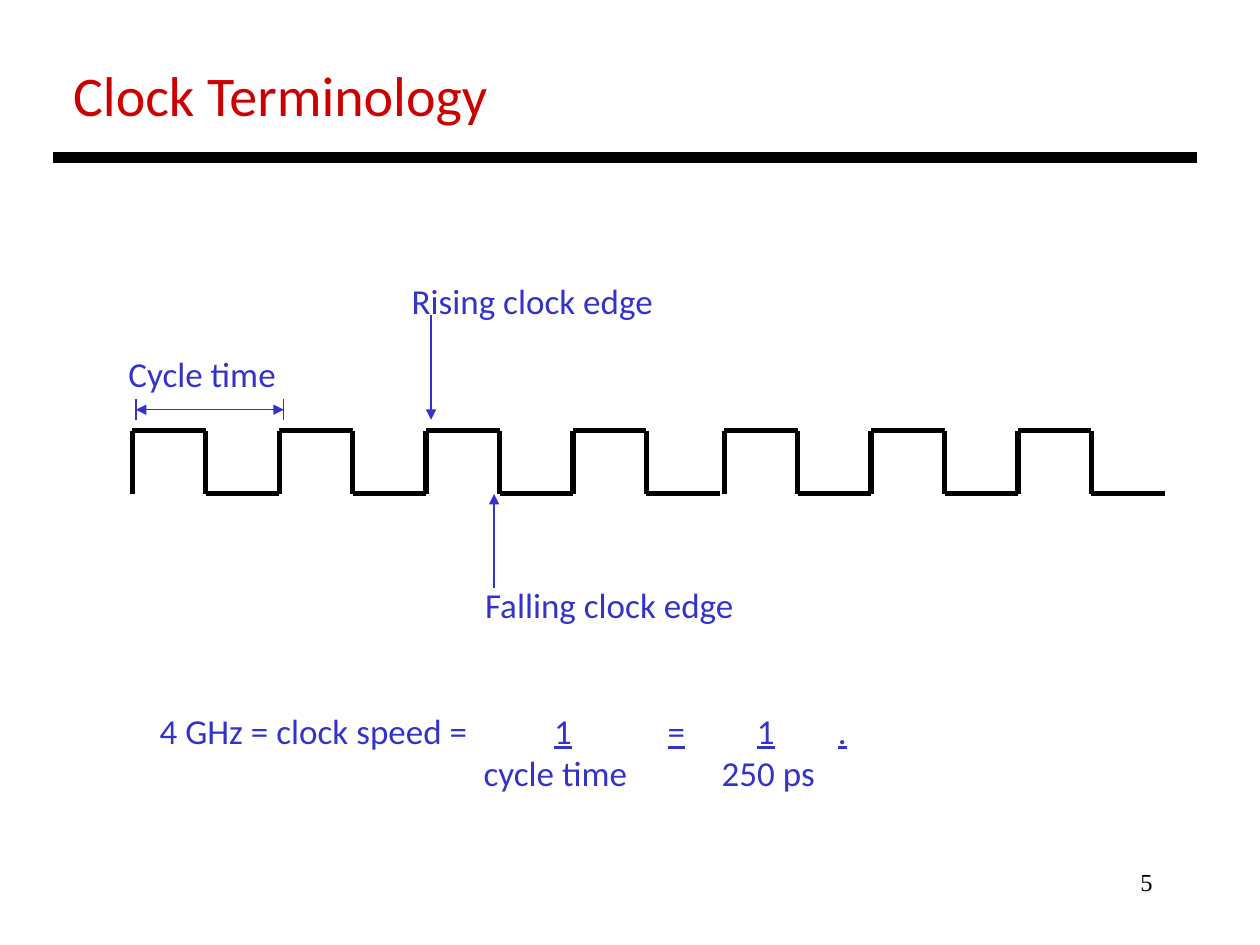
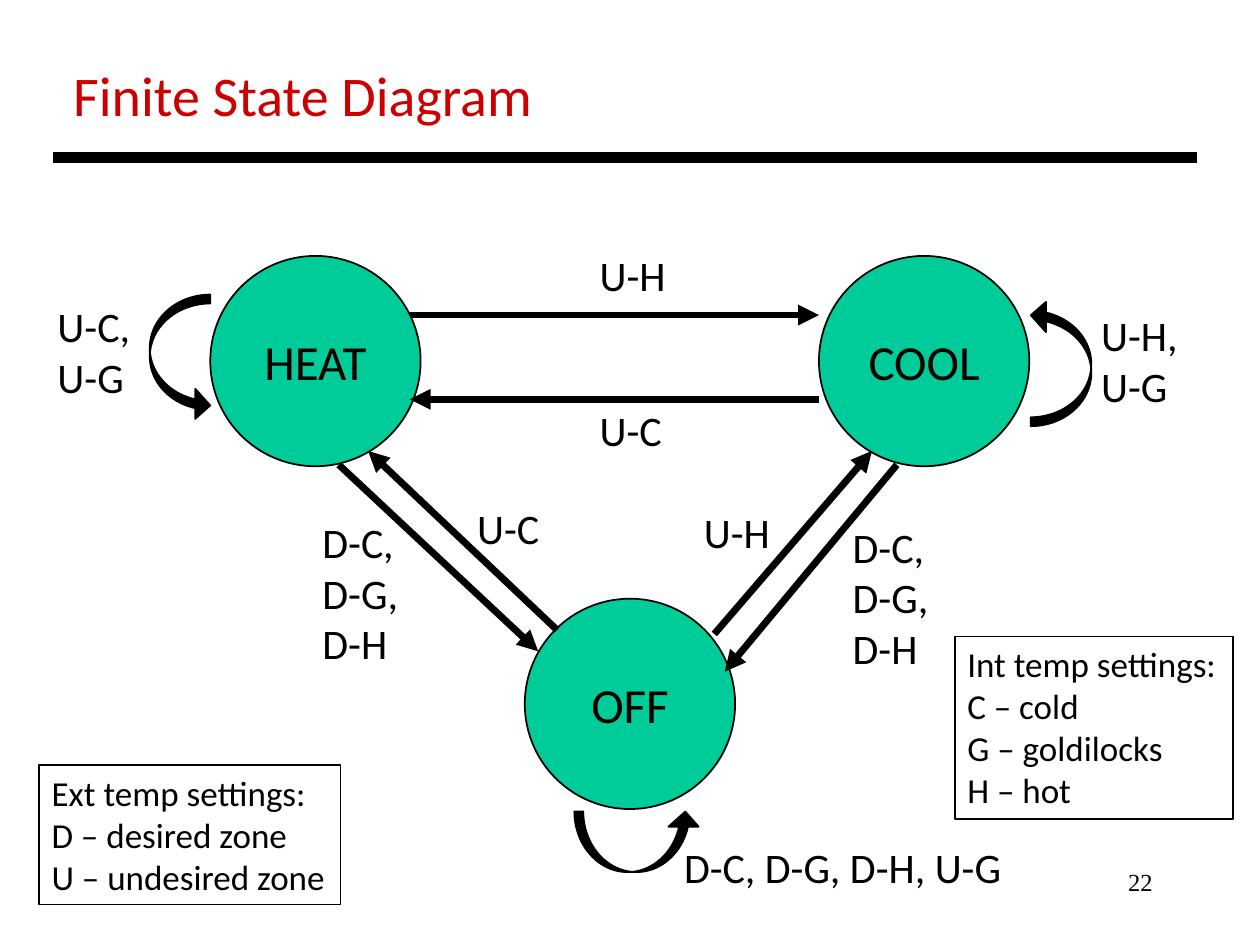
"""Build two lecture slides: clock terminology and a finite state diagram."""
from dataclasses import dataclass

from lxml import etree
from pptx import Presentation
from pptx import util as u
from pptx.dml.color import RGBColor
from pptx.enum import shapes, text
from pptx.oxml.ns import qn


@dataclass(frozen=True)
class Theme:
    black: str = "000000"
    red: str = "CC0000"
    blue: str = "3333CC"
    green: str = "00CC99"
    font: str = "Calibri"
    number_font: str = "Times New Roman"
    title: int = 32
    state: int = 28
    label: int = 24
    note: int = 20
    number: int = 14


theme = Theme()


def write(box, lines, size, color=theme.black, font=theme.font, align="LEFT", anchor="TOP", wrap=False):
    """Fill a shape with paragraphs; a line is a string or a list of (string, underlined) pairs."""
    frame_format = {
        "word_wrap": wrap,
        "auto_size": text.MSO_AUTO_SIZE.NONE,
        "vertical_anchor": text.MSO_ANCHOR[anchor],
    }
    for name, value in frame_format.items():
        setattr(box.text_frame, name, value)
    for index, line in enumerate(lines):
        para = box.text_frame.paragraphs[0] if index == 0 else box.text_frame.add_paragraph()
        para.alignment = text.PP_ALIGN[align]
        for words, underlined in [(line, False)] if isinstance(line, str) else line:
            span = para.add_run()
            span.text = words
            span_format = {"name": font, "size": u.Pt(size), "underline": underlined}
            for name, value in span_format.items():
                setattr(span.font, name, value)
            span.font.color.rgb = RGBColor.from_string(color)


def draw_line(page, ends, width, color=theme.black, arrows=()):
    """Draw a straight line between two points, with the named arrowheads."""
    line = page.shapes.add_connector(shapes.MSO_CONNECTOR.STRAIGHT, *map(u.Cm, ends))
    line.line.color.rgb = RGBColor.from_string(color)
    line.line.width = u.Pt(width)
    properties = line._element.spPr
    for arrow in arrows:
        etree.SubElement(properties.find(qn("a:ln")), qn(f"a:{arrow}"), type="triangle")
    etree.SubElement(properties, qn("a:effectLst"))


deck = Presentation()
deck.slide_width, deck.slide_height = u.Cm(25.4), u.Cm(19.05)

pages = []
for heading, heading_width, number in [("Clock Terminology", 8.97, "5"), ("Finite State Diagram", 9.88, "22")]:
    page = deck.slides.add_slide(deck.slide_layouts[5])
    title = page.shapes.title
    title_place = {"left": 1.22, "top": 1.09, "width": heading_width, "height": 1.63}
    for name, value in title_place.items():
        setattr(title, name, u.Cm(value))
    write(title, [heading], theme.title, theme.red)
    draw_line(page, (1.07, 3.18, 24.13, 3.18), 6)
    number_box = page.shapes.add_textbox(*map(u.Cm, (18.21, 17.35, 5.28, 1.27)))
    write(number_box, [number], theme.number, font=theme.number_font, align="RIGHT", wrap=True)
    pages.append(page)
clock_page, state_page = pages

high, low, half_cycle = 8.68, 9.95, 1.48
for wave_start, cycles in [(2.67, 4), (14.6, 3)]:
    for cycle in range(cycles):
        rise = wave_start + 2 * cycle * half_cycle
        fall = rise + half_cycle
        for ends in [
            (rise, low, rise, high),
            (rise, high, fall, high),
            (fall, low, fall, high),
            (fall, low, fall + half_cycle, low),
        ]:
            draw_line(clock_page, ends, 3)

for ends, arrows in [
    ((2.74, 8.05, 2.74, 8.46), ()),
    ((5.72, 8.05, 5.72, 8.46), ()),
    ((2.74, 8.26, 5.72, 8.26), ("headEnd", "tailEnd")),
    ((8.69, 6.35, 8.69, 8.46), ("tailEnd",)),
    ((9.96, 11.86, 9.96, 9.96), ("tailEnd",)),
]:
    draw_line(clock_page, ends, 0.75, theme.blue, arrows)

for words, left, top, width in [
    ("Cycle time", 2.34, 6.99, 3.53),
    ("Rising clock edge", 8.05, 5.51, 5.44),
    ("Falling clock edge", 9.53, 11.63, 5.56),
]:
    box = clock_page.shapes.add_textbox(*map(u.Cm, (left, top, width, 1.12)))
    write(box, [words], theme.note, theme.blue)

formula = clock_page.shapes.add_textbox(*map(u.Cm, (2.97, 14.17, 14.8, 1.96)))
formula_lines = [
    [("4 GHz = clock speed = ", False), ("\t1\t=", True), ("\t", False), ("\t1\t.", True)],
    "\tcycle time\t250 ps",
]
write(formula, formula_lines, theme.note, theme.blue, wrap=True)
formula_stops = [(7.95, 10.24, 10.9, 12.04, 13.67), (6.53, 11.33)]
for para, stops in zip(formula.text_frame.paragraphs, formula_stops):
    tabs = etree.SubElement(para._p.get_or_add_pPr(), qn("a:tabLst"))
    for stop in stops:
        etree.SubElement(tabs, qn("a:tab"), pos=str(int(u.Cm(stop))), algn="l")

for state, left, top in [("HEAT", 4.24, 5.16), ("COOL", 16.51, 5.16), ("OFF", 10.58, 12.07)]:
    circle = state_page.shapes.add_shape(shapes.MSO_SHAPE.OVAL, *map(u.Cm, (left, top, 4.24, 4.24)))
    circle.shadow.inherit = False
    circle.fill.solid()
    circle.fill.fore_color.rgb = RGBColor.from_string(theme.green)
    circle.line.color.rgb = RGBColor.from_string(theme.black)
    circle.line.width = u.Pt(1)
    write(circle, [state], theme.state, align="CENTER", anchor="MIDDLE")

for transition in [
    (8.26, 6.35, 16.51, 6.35),
    (16.51, 8.05, 8.26, 8.05),
    (11.23, 12.7, 7.42, 9.09),
    (14.4, 12.78, 17.58, 9.09),
    (18.08, 9.37, 14.61, 13.54),
    (6.83, 9.37, 10.85, 13.13),
]:
    draw_line(state_page, transition, 4, arrows=("tailEnd",))

for left, top, rotation in [(12.24, 15.7, 270), (20.78, 6.05, 180), (3.02, 5.94, 0)]:
    loop = state_page.shapes.add_shape(
        shapes.MSO_SHAPE.CURVED_RIGHT_ARROW, *map(u.Cm, (left, top, 1.22, 2.54))
    )
    loop.rotation = rotation
    loop.shadow.inherit = False
    for index, value in enumerate((0.147, 0.5, 0.25)):
        loop.adjustments[index] = value
    loop.fill.solid()
    loop.fill.fore_color.rgb = RGBColor.from_string(theme.black)
    loop.line.color.rgb = RGBColor.from_string(theme.black)
    loop.line.width = u.Pt(1)

desired = ["D-C,", "D-G,", "D-H"]
for lines, left, top, width in [
    (["U-H"], 11.84, 4.9, 1.85),
    (["U-C"], 11.84, 8.03, 1.78),
    (desired, 6.25, 10.29, 2.06),
    (desired, 16.94, 10.39, 2.06),
    (["D-C, D-G, D-H, U-G"], 13.54, 16.84, 6.96),
    (["U-C,", "U-G"], 0.91, 5.94, 1.98),
    (["U-H,", "U-G"], 21.95, 6.12, 2.08),
    (["U-C"], 9.37, 10.01, 1.78),
    (["U-H"], 13.94, 10.08, 1.85),
]:
    height = 0.25 + 1.03 * len(lines)
    box = state_page.shapes.add_textbox(*map(u.Cm, (left, top, width, height)))
    write(box, lines, theme.label)

for lines, place in [
    (["Ext temp settings:", "D – desired zone", "U – undesired zone"], (0.79, 15.42, 6.07, 2.82)),
    (["Int temp settings:", "C – cold", "G – goldilocks", "H – hot"], (19.25, 12.83, 5.61, 3.68)),
]:
    legend = state_page.shapes.add_shape(shapes.MSO_SHAPE.RECTANGLE, *map(u.Cm, place))
    legend.shadow.inherit = False
    legend.fill.background()
    legend.line.color.rgb = RGBColor.from_string(theme.black)
    legend.line.width = u.Pt(0.75)
    write(legend, lines, theme.note)

deck.save("out.pptx")
